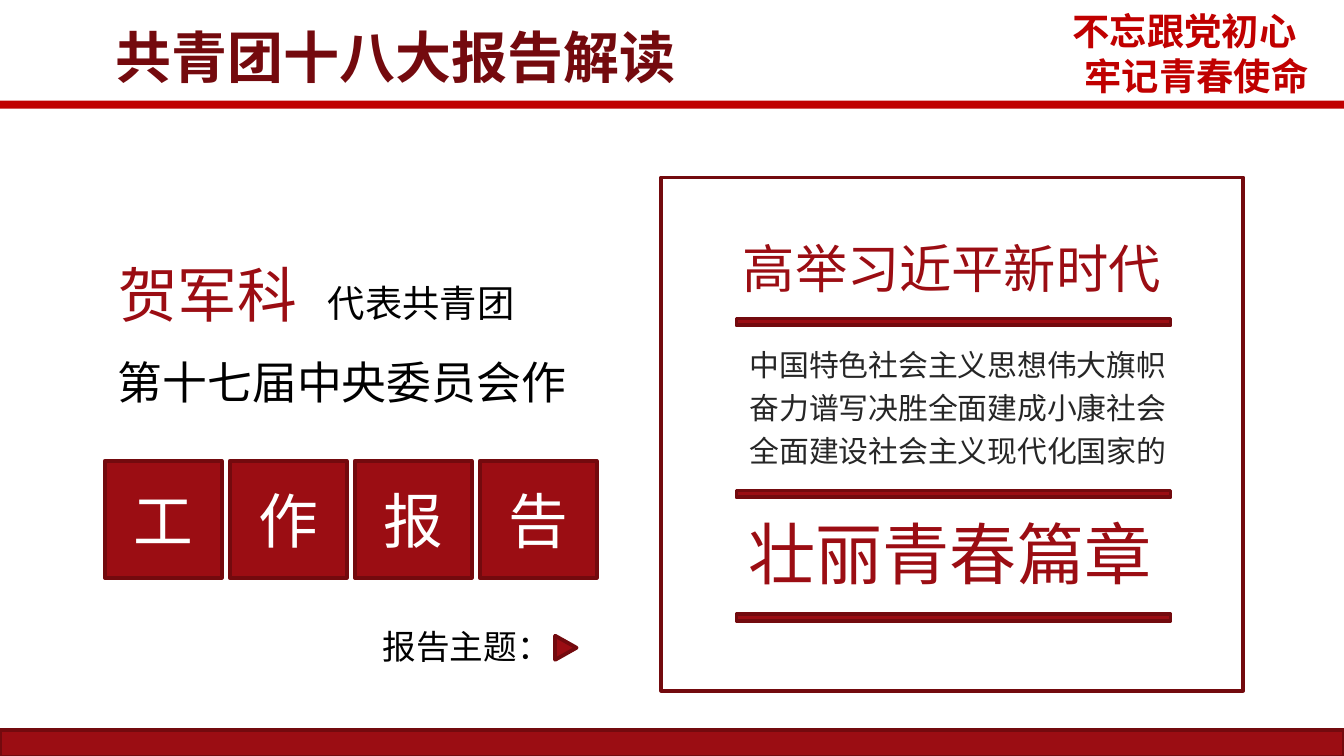
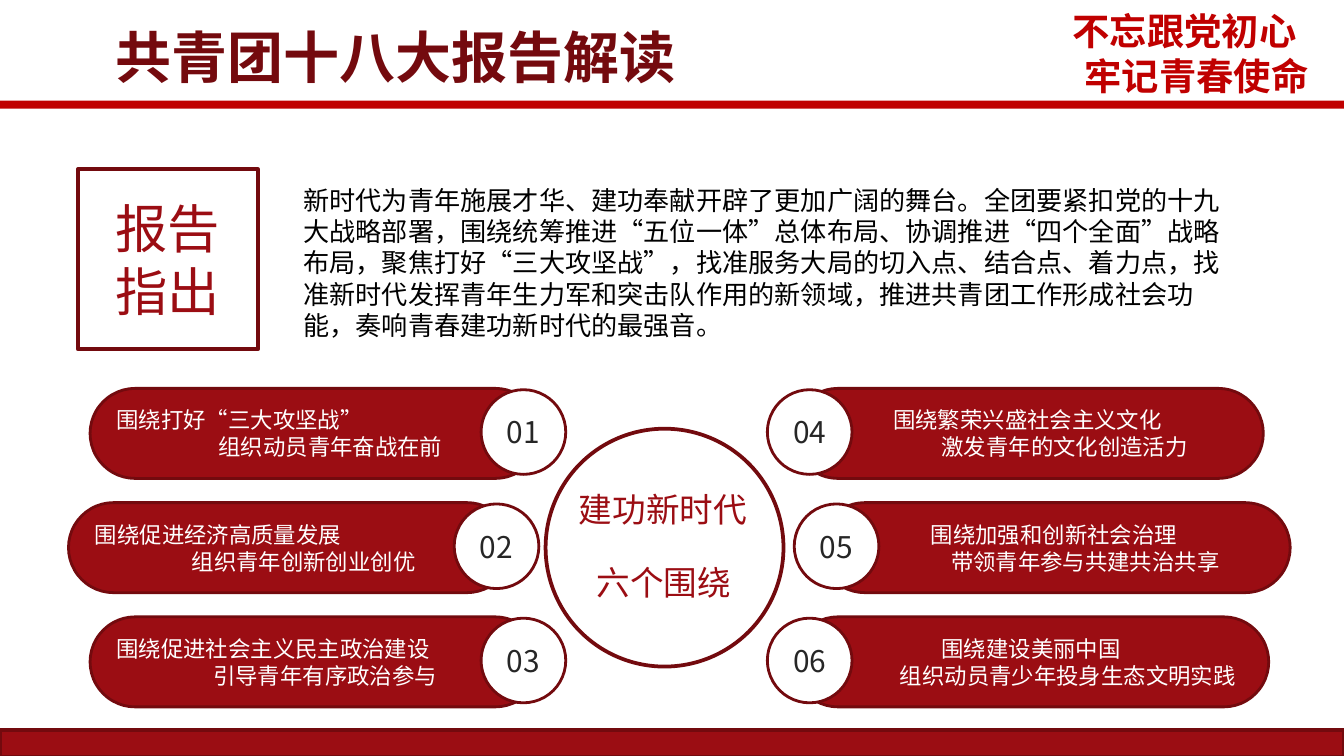
from pptx import Presentation
from pptx.dml.color import RGBColor
from pptx.enum.shapes import MSO_SHAPE
from pptx.enum.text import MSO_ANCHOR, MSO_AUTO_SIZE, PP_ALIGN
from pptx.oxml.ns import qn
from pptx.util import Inches, Pt
from lxml import etree

RECT, PILL = MSO_SHAPE.RECTANGLE, MSO_SHAPE.ROUNDED_RECTANGLE
OVAL, TRIANGLE = MSO_SHAPE.OVAL, MSO_SHAPE.ISOSCELES_TRIANGLE
LEFT, CENTER = PP_ALIGN.LEFT, PP_ALIGN.CENTER
MIDDLE, GROW = MSO_ANCHOR.MIDDLE, MSO_AUTO_SIZE.SHAPE_TO_FIT_TEXT

W = 10
H = W * 9 / 16
FONT = "Noto Sans CJK SC"
C = {"red": "9B0D13", "edge": "730A0E", "title": "740A0E", "bright": "C00000",
     "white": "FFFFFF", "black": "000000", "grey": "262626"}

TITLE = "共青团十八大报告解读"
SLOGAN = [("不忘跟党初心", 0.12), ("牢记青春使命", 0.21)]
SPEAKER = [("贺军科", 32, "red"), ("\t", 18, "black"), ("代表共青团", 20, "black")]
COMMITTEE = "第十七届中央委员会作"
TILES = "工作报告"
THEME_LABEL = "报告主题："
THEME_TOP = "高举习近平新时代"
THEME_LINES = ["中国特色社会主义思想伟大旗帜", "奋力谱写决胜全面建成小康社会",
               "全面建设社会主义现代化国家的"]
THEME_END = "壮丽青春篇章"
RULE_TOPS = [2.37, 3.65, 4.57]

BADGE = ["报告", "指出"]
SUMMARY = ("新时代为青年施展才华、建功奉献开辟了更加广阔的舞台。全团要紧扣党的十九大战略部署，"
           "围绕统筹推进“五位一体”总体布局、协调推进“四个全面”战略布局，聚焦打好“三大攻坚战”，"
           "找准服务大局的切入点、结合点、着力点，找准新时代发挥青年生力军和突击队作用的新领域，"
           "推进共青团工作形成社会功能，奏响青春建功新时代的最强音。")
HUB = [("建功新时代", 4.21, 3.59, 1.46), ("六个围绕", 4.34, 4.13, 1.21)]
TASKS = [
    ("01", 0.67, 3.35, 3.58, [("围绕打好“三大攻坚战”", 0), ("组织动员青年奋战在前", 0.76)]),
    ("02", 0.51, 3.3, 3.38, [("围绕促进经济高质量发展", 0), ("组织青年创新创业创优", 0.72)]),
    ("03", 0.67, 3.35, 3.58, [("围绕促进社会主义民主政治建设", 0), ("引导青年有序政治参与", 0.72)]),
    ("04", 5.9, 3.5, 5.71, [("围绕繁荣兴盛社会主义文化", 0.55), ("激发青年的文化创造活力", 0.91)]),
    ("05", 6.1, 3.5, 5.91, [("围绕加强和创新社会治理", 0.63), ("带领青年参与共建共治共享", 0.78)]),
    ("06", 5.9, 3.54, 5.71, [("围绕建设美丽中国", 0.91), ("组织动员青少年投身生态文明实践", 0.6)]),
]
TASK_ROWS, TASK_TOP, TASK_PITCH = 3, 2.89, 0.85


def rgb(name):
    return RGBColor.from_string(C[name])


def add_run(p, text, size, color, bold=False):
    r = p.add_run()
    r.text = text
    r.font.size = Pt(size)
    r.font.bold = bold
    r.font.color.rgb = rgb(color)
    r.font.name = FONT
    etree.SubElement(r.font._element, qn("a:ea")).set("typeface", FONT)


def write(tf, lines, size, color, align=LEFT, bold=False, spacing=None):
    for i, line in enumerate(lines):
        p = tf.paragraphs[0] if i == 0 else tf.add_paragraph()
        p.alignment = align
        if spacing:
            p.line_spacing = spacing
        add_run(p, line, size, color, bold)


def write_indented(tf, lines, size, color, bold=False):
    write(tf, [text for text, _ in lines], size, color, bold=bold)
    for p, (_, indent) in zip(tf.paragraphs, lines):
        p._p.get_or_add_pPr().set("marL", str(Inches(indent)))


def add_text(s, x, y, w, h, lines, size, color, wrap=True, inset=0.1, **style):
    tf = s.shapes.add_textbox(Inches(x), Inches(y), Inches(w), Inches(h)).text_frame
    tf.word_wrap = wrap
    tf.auto_size = GROW
    tf.margin_left = tf.margin_right = Inches(inset)
    tf.margin_top = tf.margin_bottom = Inches(inset / 2)
    write(tf, lines, size, color, **style)
    return tf


def add_box(s, kind, x, y, w, h, fill="red", line=2):
    sp = s.shapes.add_shape(kind, Inches(x), Inches(y), Inches(w), Inches(h))
    sp.shadow.inherit = False
    sp.fill.solid()
    sp.fill.fore_color.rgb = rgb(fill)
    if line:
        sp.line.color.rgb = rgb("edge")
        sp.line.width = Pt(line)
    else:
        sp.line.fill.background()
    sp.text_frame.word_wrap = True
    sp.text_frame.vertical_anchor = MIDDLE
    return sp


def new_slide(prs):
    s = prs.slides.add_slide(prs.slide_layouts[6])
    add_box(s, RECT, 0, 5.43, W, 0.2)
    add_box(s, RECT, 0, 0.75, W, 0.06, "bright", None)
    slogan = add_text(s, 7.76, 0.01, 2.29, 0.77, [], 20, "bright")
    write_indented(slogan, SLOGAN, 20, "bright", bold=True)
    add_text(s, 0.79, 0.13, 5.56, 0.58, [TITLE], 30, "title", inset=0.07, bold=True)
    return s


def report_slide(prs):
    s = new_slide(prs)
    p = add_text(s, 0.78, 1.87, 3.88, 0.64, [], 32, "red").paragraphs[0]
    tabs = etree.SubElement(p._p.get_or_add_pPr(), qn("a:tabLst"))
    etree.SubElement(tabs, qn("a:tab"), pos=str(Inches(1.56)), algn="l")
    for text, size, color in SPEAKER:
        add_run(p, text, size, color)
    add_text(s, 0.78, 2.59, 3.66, 0.5, [COMMITTEE], 24, "black")
    for i, char in enumerate(TILES):
        sp = add_box(s, RECT, 0.78 + 0.93 * i, 3.43, 0.87, 0.87)
        write(sp.text_frame, [char], 32, "white", CENTER)
    add_text(s, 2.75, 4.61, 1.47, 0.4, [THEME_LABEL], 18, "black", wrap=False)
    add_box(s, TRIANGLE, 4.12, 4.74, 0.18, 0.16).rotation = 90

    add_box(s, RECT, 4.92, 1.32, 4.33, 3.82, "white")
    add_text(s, 5.43, 1.71, 3.53, 0.57, [THEME_TOP], 28, "red")
    add_text(s, 5.48, 2.48, 3.53, 1.07, THEME_LINES, 16, "grey", spacing=1.2)
    add_text(s, 5.47, 3.76, 3.34, 0.71, [THEME_END], 36, "red")
    for y in RULE_TOPS:
        add_box(s, RECT, 5.48, y, 3.23, 0.05)


def tasks_slide(prs):
    s = new_slide(prs)
    sp = add_box(s, RECT, 0.58, 1.26, 1.34, 1.34, "white")
    write(sp.text_frame, BADGE, 28, "red", CENTER)
    summary = add_text(s, 2.16, 1.32, 7.17, 1.28, [SUMMARY], 14, "black")
    summary.paragraphs[0]._p.get_or_add_pPr().set("hangingPunct", "0")
    add_box(s, OVAL, 4.06, 3.19, 1.77, 1.77, "white")
    for text, x, y, w in HUB:
        add_text(s, x, y, w, 0.4, [text], 18, "red", wrap=False)
    for i, (number, x, w, dot_x, lines) in enumerate(TASKS):
        y = TASK_TOP + TASK_PITCH * (i % TASK_ROWS)
        sp = add_box(s, PILL, x, y, w, 0.67, line=1.5)
        sp.adjustments[0] = 0.5
        write_indented(sp.text_frame, lines, 12, "white")
        dot = add_box(s, OVAL, dot_x, y + 0.01, 0.63, 0.63, "white", 1.5)
        write(dot.text_frame, [number], 16, "grey", CENTER)


def main():
    prs = Presentation()
    prs.slide_width, prs.slide_height = Inches(W), Inches(H)
    report_slide(prs)
    tasks_slide(prs)
    prs.save("out.pptx")


if __name__ == "__main__":
    main()
